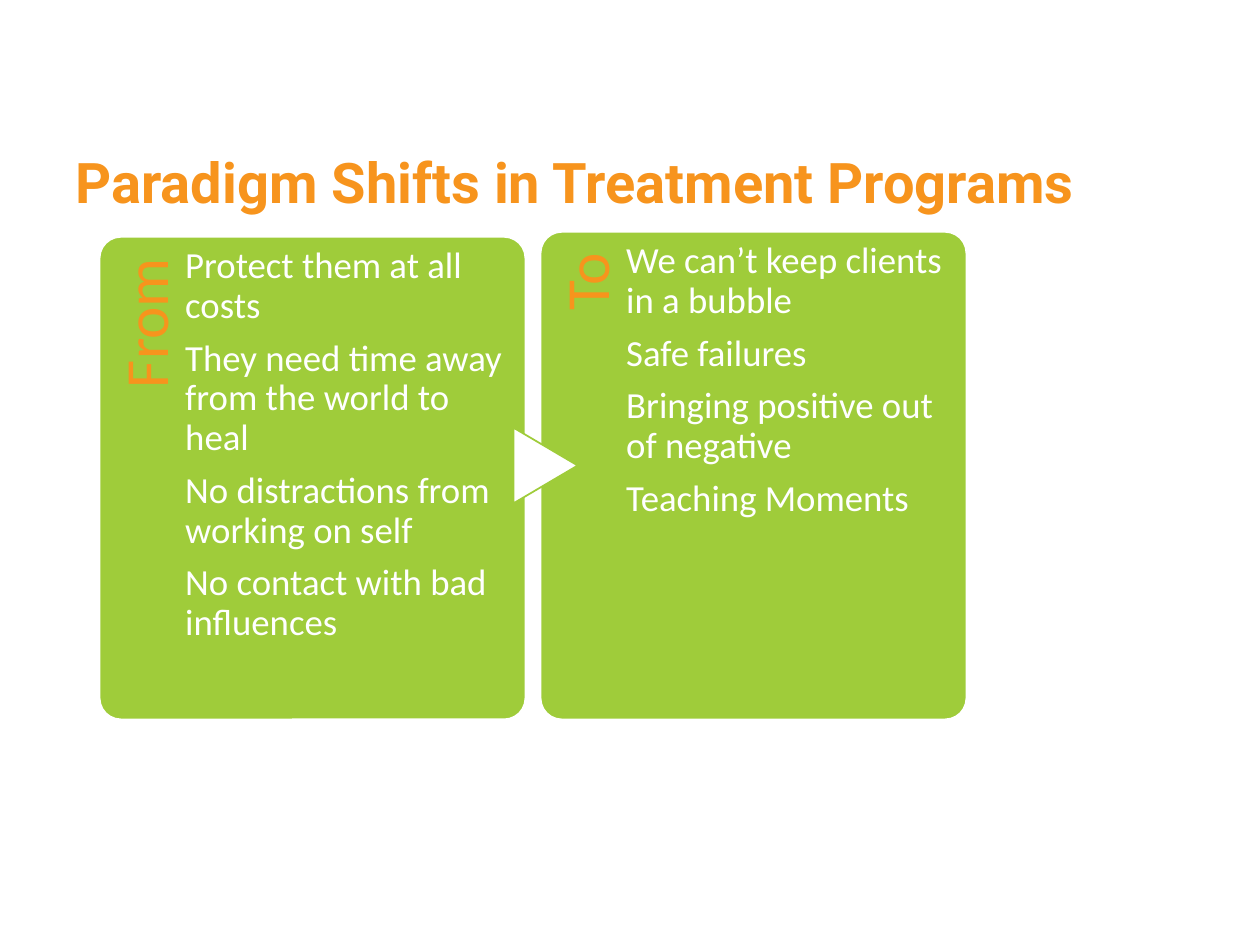
import dataclasses

import pptx
import pptx.dml.color
import pptx.enum.shapes
import pptx.enum.text
import pptx.util

Inches = pptx.util.Inches
Shapes = pptx.enum.shapes.MSO_SHAPE


@dataclasses.dataclass(frozen=True)
class Theme:
    orange: str = "F7941D"
    green: str = "9FCC3A"
    white: str = "FFFFFF"
    title_font: str = "Roboto"
    body_font: str = "Calibri"
    title_size: int = 32
    label_size: int = 35
    body_size: int = 21
    paragraph_gap: float = 7.5
    line_spacing: float = 0.9


class SlideBuilder:
    def __init__(self, slide, theme):
        self.slide = slide
        self.theme = theme

    def color(self, value):
        return pptx.dml.color.RGBColor.from_string(value)

    def shape(self, kind, left, top, width, height, fill, line):
        shape = self.slide.shapes.add_shape(
            kind, Inches(left), Inches(top), Inches(width), Inches(height))
        shape.shadow.inherit = False
        shape.fill.solid()
        shape.fill.fore_color.rgb = self.color(fill)
        shape.line.color.rgb = self.color(line)
        shape.line.width = pptx.util.Pt(1)
        return shape

    def text(self, left, top, width, height, lines, font, size, color,
             bold=False, margins=(0.1, 0.05, 0.1, 0.05)):
        box = self.slide.shapes.add_textbox(
            Inches(left), Inches(top), Inches(width), Inches(height))
        frame = box.text_frame
        frame.word_wrap = True
        (frame.margin_left, frame.margin_top,
         frame.margin_right, frame.margin_bottom) = map(Inches, margins)
        frame.text = "\n".join(lines)
        for paragraph in frame.paragraphs:
            for run in paragraph.runs:
                run.font.name = font
                run.font.size = pptx.util.Pt(size)
                run.font.bold = bold
                run.font.color.rgb = self.color(color)
        return box

    def title(self, text):
        theme = self.theme
        self.text(0.5, 1.12, 9.15, 0.64, [text], theme.title_font,
                  theme.title_size, theme.orange, bold=True)

    def label(self, left, top, length, text):
        theme = self.theme
        thickness = 0.68
        offset = (length - thickness) / 2
        box = self.text(left - offset, top + offset, length, thickness, [text],
                        theme.body_font, theme.label_size, theme.orange,
                        margins=(0, 0.13, 0.17, 0))
        box.rotation = 270
        paragraph = box.text_frame.paragraphs[0]
        paragraph.alignment = pptx.enum.text.PP_ALIGN.RIGHT
        paragraph.line_spacing = theme.line_spacing

    def card(self, left, top, height, heading, points):
        theme = self.theme
        card = self.shape(Shapes.ROUNDED_RECTANGLE, left, top, 3.38, height,
                          theme.green, theme.white)
        card.adjustments[0] = 0.05
        self.label(left, top, 0.82 * height, heading)
        body = self.text(left + 0.68, top, 2.52, height, points,
                         theme.body_font, theme.body_size, theme.white,
                         margins=(0, 0.08, 0, 0))
        for paragraph in body.text_frame.paragraphs:
            paragraph.line_spacing = theme.line_spacing
            paragraph.space_after = pptx.util.Pt(theme.paragraph_gap)

    def arrow(self, left, top, width, height):
        arrow = self.shape(Shapes.FLOWCHART_EXTRACT, left, top, width, height,
                           self.theme.white, self.theme.green)
        arrow.rotation = 90


def main():
    presentation = pptx.Presentation()
    presentation.slide_width = Inches(10)
    presentation.slide_height = Inches(7.5)
    slide = presentation.slides.add_slide(presentation.slide_layouts[6])
    builder = SlideBuilder(slide, Theme())

    builder.title("Paradigm Shifts in Treatment Programs")
    builder.card(0.79, 1.88, 3.83, "From", [
        "Protect them at all costs",
        "They need time away from the world to heal",
        "No distractions from working on self",
        "No contact with bad influences",
    ])
    builder.card(4.29, 1.84, 3.87, "To", [
        "We can’t keep clients in a bubble",
        "Safe failures",
        "Bringing positive out of negative",
        "Teaching Moments",
    ])
    builder.arrow(4.03, 3.44, 0.6, 0.51)
    presentation.save("out.pptx")


if __name__ == "__main__":
    main()
